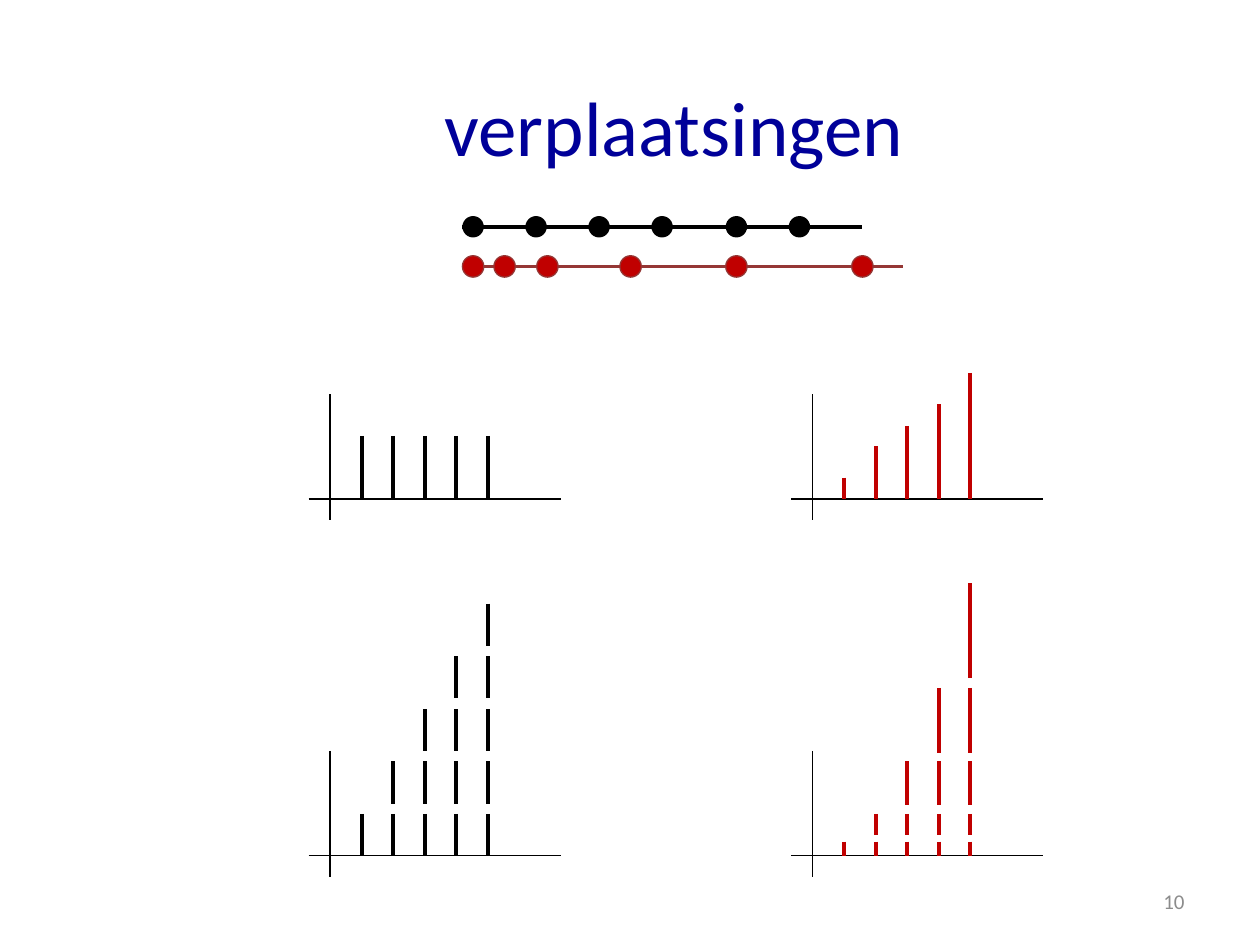
from lxml.etree import SubElement
from pptx import Presentation
from pptx.dml.color import RGBColor
from pptx.enum.shapes import MSO_CONNECTOR, MSO_SHAPE
from pptx.enum.text import MSO_ANCHOR, PP_ALIGN
from pptx.oxml.ns import qn
from pptx.util import Inches, Pt

BLACK, RED, DARK_RED = "000000", "C00000", "953735"
DOT_SIZE = 0.17
BAR_STEP = 0.25
THICK, THIN = 2.25, 0.75

TEXTS = [
    {"text": "10", "box": (7.17, 6.95, 2.33, 0.4), "color": "8C8C8C",
     "align": PP_ALIGN.RIGHT, "font": {"name": "Calibri", "size": Pt(12)}},
    {"text": "verplaatsingen ", "box": (2.92, 0.41, 5, 1.17), "color": "000099",
     "align": PP_ALIGN.CENTER, "font": {"name": "Calibri", "size": Pt(44)}},
]

TRACKS = [
    {"y": 1.8, "end": 6.84, "fill": BLACK, "line": BLACK, "outline": None,
     "dots": [3.67, 4.17, 4.67, 5.17, 5.76, 6.26]},
    {"y": 2.115, "end": 7.17, "fill": RED, "line": DARK_RED, "outline": DARK_RED,
     "dots": [3.67, 3.92, 4.26, 4.92, 5.76, 6.76]},
]

EVEN_STEPS = [(6.46, 6.79), (6.04, 6.38), (5.63, 5.96), (5.21, 5.54), (4.79, 5.13)]
GROWING_STEPS = [(6.68, 6.79), (6.46, 6.63), (6.04, 6.39), (5.46, 5.98), (4.63, 5.38)]


def stacked(steps):
    """Give each column one step more than the column before it."""
    return [steps[:count] for count in range(1, len(steps) + 1)]


DIAGRAMS = [
    {"x": 2.62, "base": 3.96, "color": BLACK, "columns": [[(3.46, 3.96)]] * 5},
    {"x": 6.45, "base": 3.96, "color": RED,
     "columns": [[(top, 3.96)] for top in (3.79, 3.54, 3.38, 3.21, 2.96)]},
    {"x": 2.62, "base": 6.79, "color": BLACK, "columns": stacked(EVEN_STEPS)},
    {"x": 6.45, "base": 6.79, "color": RED, "columns": stacked(GROWING_STEPS)},
]


def rgb(value):
    """Turn a hex string into a colour."""
    return RGBColor.from_string(value)


def add_text(slide, item):
    """Add one line of text, centred vertically in its box."""
    frame = slide.shapes.add_textbox(*map(Inches, item["box"])).text_frame
    for name, value in {"word_wrap": True, "vertical_anchor": MSO_ANCHOR.MIDDLE}.items():
        setattr(frame, name, value)
    paragraph = frame.paragraphs[0]
    paragraph.alignment = item["align"]
    run = paragraph.add_run()
    run.text = item["text"]
    for name, value in item["font"].items():
        setattr(run.font, name, value)
    run.font.color.rgb = rgb(item["color"])


def add_line(shapes, start, end, color, width):
    """Add a straight line without a shadow."""
    connector = shapes.add_connector(MSO_CONNECTOR.STRAIGHT, *map(Inches, start + end))
    connector.line.color.rgb = rgb(color)
    connector.line.width = Pt(width)
    SubElement(connector._element.spPr, qn("a:effectLst"))


def add_track(slide, track):
    """Add a line with the dots of one movement on it."""
    shapes = slide.shapes.add_group_shape().shapes
    y = track["y"]
    add_line(shapes, (track["dots"][0], y), (track["end"], y), track["line"], THICK)
    for left in track["dots"]:
        box = (left, y - DOT_SIZE / 2, DOT_SIZE, DOT_SIZE)
        dot = shapes.add_shape(MSO_SHAPE.OVAL, *map(Inches, box))
        dot.shadow.inherit = False
        dot.fill.solid()
        dot.fill.fore_color.rgb = rgb(track["fill"])
        if track["outline"]:
            dot.line.color.rgb = rgb(track["outline"])
            dot.line.width = Pt(THIN)
        else:
            dot.line.fill.background()


def add_diagram(shapes, diagram):
    """Add the axes and the bars of one diagram."""
    x, base = diagram["x"], diagram["base"]
    add_line(shapes, (x, base - 0.83), (x, base + 0.17), BLACK, THIN)
    add_line(shapes, (x - 0.17, base), (x + 1.83, base), BLACK, THIN)
    for number, column in enumerate(diagram["columns"], start=1):
        bar_x = x + number * BAR_STEP
        for top, bottom in column:
            add_line(shapes, (bar_x, top), (bar_x, bottom), diagram["color"], THICK)


def main():
    """Build the slide and save it."""
    presentation = Presentation()
    presentation.slide_width = Inches(10)
    presentation.slide_height = Inches(7.5)
    slide = presentation.slides.add_slide(presentation.slide_layouts[6])
    for item in TEXTS:
        add_text(slide, item)
    for track in TRACKS:
        add_track(slide, track)
    diagram_shapes = slide.shapes.add_group_shape().shapes
    for diagram in DIAGRAMS:
        add_diagram(diagram_shapes, diagram)
    presentation.save("out.pptx")


if __name__ == "__main__":
    main()
